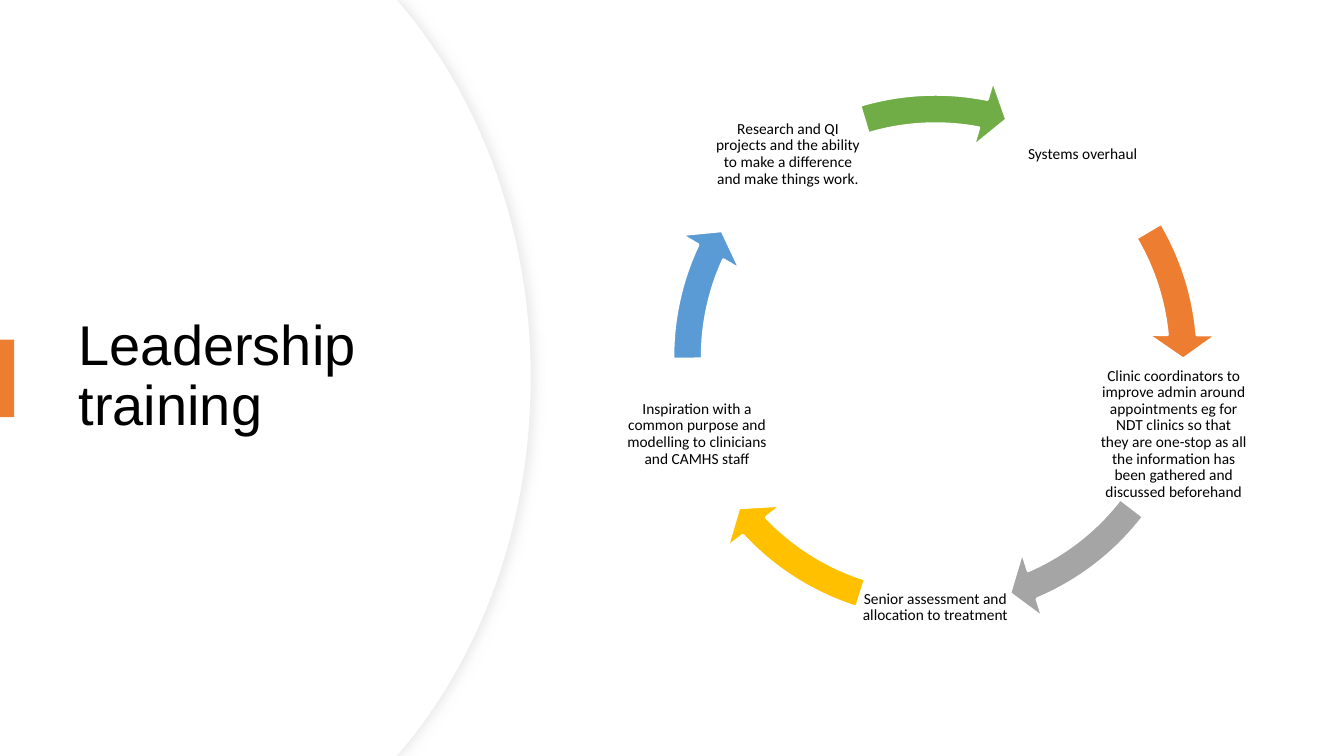
from dataclasses import dataclass
from math import cos, radians, sin

from lxml import etree
from pptx import Presentation
from pptx.dml.color import RGBColor
from pptx.enum.shapes import MSO_SHAPE
from pptx.enum.text import MSO_ANCHOR, PP_ALIGN
from pptx.oxml.ns import qn
from pptx.util import Inches, Pt

CIRCULAR_ARROW = MSO_SHAPE.CIRCULAR_ARROW
RECTANGLE = MSO_SHAPE.RECTANGLE
MIDDLE = MSO_ANCHOR.MIDDLE
LEFT, CENTER = PP_ALIGN.LEFT, PP_ALIGN.CENTER
TITLE_ONLY = 5
WIDTH, HEIGHT = Inches(40 / 3), Inches(7.5)


@dataclass(frozen=True)
class Theme:
    """Colours, fonts and sizes of the slide."""
    paper: str = "FFFFFF"
    ink: str = "000000"
    edge: str = "EFEFEF"
    shadow: str = "D9D9D9"
    accent: str = "ED7D31"
    title_font: str = "Arial"
    label_font: str = "Calibri"
    title_size: int = 40
    label_size: int = 11
    line_spacing: float = 0.9


@dataclass(frozen=True)
class Box:
    """An area in EMU."""
    left: int
    top: int
    width: int
    height: int

    def point(self, across, down):
        """Return the point at percentages of the box."""
        return (self.left + round(self.width * across / 100),
                self.top + round(self.height * down / 100))

    def inner(self, left, top, width, height):
        """Return the inner box given by percentages of this box."""
        return Box(*self.point(left, top),
                   round(self.width * width / 100), round(self.height * height / 100))

    def frame(self):
        """Return left, top, width and height."""
        return self.left, self.top, self.width, self.height


THEME = Theme()
SLIDE = Box(0, 0, WIDTH, HEIGHT)
CURVE = ((76.1, 1.07), (90.9, 13.6), (100, 30.93), (100, 50))
CURVE_STEPS = 24
STAGES = (
    ("Systems overhaul", "ED7D31", 329.43, 354.9),
    ("Clinic coordinators to improve admin around appointments eg for NDT clinics "
     "so that they are one-stop as all the information has been gathered and "
     "discussed beforehand", "A5A5A5", 37.55, 66.92),
    ("Senior assessment and allocation to treatment", "FFC000", 107.48, 136.86),
    ("Inspiration with a common purpose and modelling to clinicians and CAMHS staff",
     "5B9BD5", 179.51, 204.98),
    ("Research and QI projects and the ability to make a difference and make things "
     "work.", "70AD47", 253.3, 281.11),
)


def paint(shape, fill, line=None, line_width=0):
    """Set fill and outline and turn off the shadow."""
    shape.fill.solid()
    shape.fill.fore_color.rgb = RGBColor.from_string(fill)
    if line:
        shape.line.color.rgb = RGBColor.from_string(line)
        shape.line.width = Pt(line_width)
    else:
        shape.line.fill.background()
    shape.shadow.inherit = False


def write(shape, text, font, size, alignment):
    """Write one paragraph, centred vertically."""
    frame = shape.text_frame
    frame.word_wrap = True
    frame.vertical_anchor = MIDDLE
    frame.text = text
    paragraph = frame.paragraphs[0]
    paragraph.alignment = alignment
    paragraph.line_spacing = THEME.line_spacing
    paragraph.font.name = font
    paragraph.font.size = Pt(size)
    paragraph.font.color.rgb = RGBColor.from_string(THEME.ink)


def cast_shadow(shape):
    """Give the shape a soft shadow to its right."""
    effects = shape.element.spPr.find(qn("a:effectLst"))
    shadow = etree.SubElement(effects, qn("a:outerShdw"), blurRad=str(Pt(7)),
                              dist=str(Pt(3)), dir="0", algn="l", rotWithShape="0")
    colour = etree.SubElement(shadow, qn("a:srgbClr"), val=THEME.shadow)
    etree.SubElement(colour, qn("a:alpha"), val="50000")


def curve_point(share):
    """Return the point at a share of the panel's upper curve."""
    weights = ((1 - share) ** 3, 3 * share * (1 - share) ** 2,
               3 * share ** 2 * (1 - share), share ** 3)
    return tuple(sum(weight * point[axis] for weight, point in zip(weights, CURVE))
                 for axis in (0, 1))


def add_panel(slide, box):
    """Add a panel with a bulging right side behind the title."""
    upper = [(74.8, 0)] + [curve_point(step / CURVE_STEPS)
                           for step in range(CURVE_STEPS + 1)]
    lower = [(across, 100 - down) for across, down in reversed(upper[:-1])]
    builder = slide.shapes.build_freeform(*box.point(0, 0))
    builder.add_line_segments(
        [box.point(*point) for point in upper + lower + [(0, 100)]], close=True)
    panel = builder.convert_to_shape()
    slide.shapes.title.element.addprevious(panel.element)
    return panel


def add_title_region(slide, box):
    """Add the curved panels, the title and its accent bar."""
    outer = add_panel(slide, box)
    paint(outer, THEME.paper, THEME.edge, 0.75)
    cast_shadow(outer)
    paint(add_panel(slide, box.inner(0, 0, 99.8, 100)), THEME.paper)
    title = slide.shapes.title
    title.left, title.top, title.width, title.height = box.inner(
        12.9, 16.93, 74.76, 66).frame()
    write(title, "Leadership training", THEME.title_font, THEME.title_size, LEFT)
    bar = slide.shapes.add_shape(RECTANGLE, *box.inner(0, 44.93, 2.66, 10.27).frame())
    paint(bar, THEME.accent)


def add_cycle(slide, box):
    """Add the ring of labels, each followed by a curved arrow."""
    side, radius = 26.6, 44.4
    shapes = slide.shapes.add_group_shape().shapes
    for index, (text, colour, start, end) in enumerate(STAGES):
        angle = radians(index * 360 / len(STAGES) - 54)
        label = shapes.add_textbox(*box.inner(
            50 + radius * cos(angle) - side / 2,
            50 + radius * sin(angle) - side / 2, side, side).frame())
        write(label, text, THEME.label_font, THEME.label_size, CENTER)
        frame = label.text_frame
        frame.margin_left = frame.margin_right = Inches(0.02)
        frame.margin_top = frame.margin_bottom = Inches(0.02)
        arrow = shapes.add_shape(CIRCULAR_ARROW, *box.frame())
        settings = (0.052, 5.6 * 0.6, end * 0.6, start * 0.6, 0.061)
        for position, value in enumerate(settings):
            arrow.adjustments[position] = value
        paint(arrow, colour, THEME.paper, 2)


def main():
    """Build and save the slide."""
    presentation = Presentation()
    presentation.slide_width, presentation.slide_height = WIDTH, HEIGHT
    slide = presentation.slides.add_slide(presentation.slide_layouts[TITLE_ONLY])
    add_title_region(slide, SLIDE.inner(0, 0, 39.53, 100))
    add_cycle(slide, SLIDE.inner(48.6, 9.87, 42, 74.67))
    presentation.save("out.pptx")


if __name__ == "__main__":
    main()
